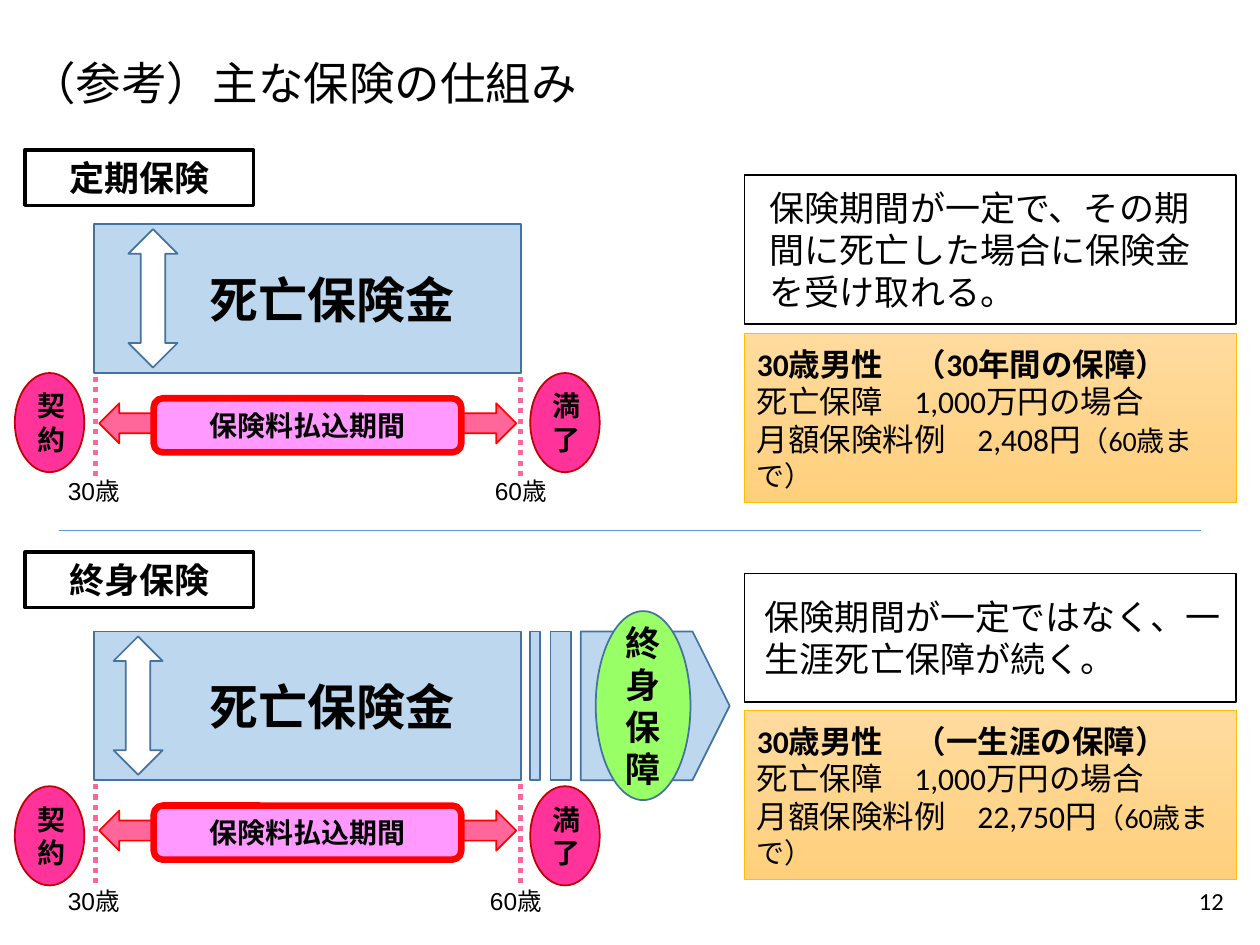
from dataclasses import dataclass

from lxml.etree import SubElement
from pptx import Presentation
from pptx.dml.color import RGBColor
from pptx.enum.dml import MSO_LINE
from pptx.enum.shapes import MSO_CONNECTOR, MSO_SHAPE
from pptx.enum.text import MSO_ANCHOR, MSO_AUTO_SIZE, PP_ALIGN
from pptx.oxml.ns import qn
from pptx.util import Cm, Pt


@dataclass(frozen=True)
class Theme:
    body_font: str = "Calibri"
    label_font: str = "Arial"
    black: str = "000000"
    white: str = "FFFFFF"
    benefit: str = "BDD7EE"
    benefit_line: str = "43739E"
    divider: str = "5B9BD5"
    pay_arrow: str = "FF6699"
    pay_label: str = "FF99FF"
    pay_line: str = "FF0000"
    event: str = "FF3399"
    event_line: str = "C00000"
    lifelong: str = "99FF66"
    example_top: str = "FFDB9E"
    example_bottom: str = "FFD07C"
    example_line: str = "FFC000"
    title_size: int = 26
    benefit_size: int = 28
    text_size: int = 20
    example_size: int = 18
    small_size: int = 16
    age_size: int = 14


theme = Theme()


def add_box(shapes, kind, at, fill=None, line=None, width=1, text="",
            size=theme.text_size, bold=True, align=PP_ALIGN.CENTER):
    """Add a preset shape with its place in centimetres and its text."""
    box = shapes.add_shape(kind, *[Cm(length) for length in at])
    box.shadow.inherit = False
    if fill:
        box.fill.solid()
        box.fill.fore_color.rgb = RGBColor.from_string(fill)
    else:
        box.fill.background()
    if line:
        box.line.color.rgb = RGBColor.from_string(line)
        box.line.width = Pt(width)
    else:
        box.line.fill.background()
    if text:
        frame = box.text_frame
        frame.word_wrap = True
        frame.vertical_anchor = MSO_ANCHOR.MIDDLE
        frame.text = text
        for para in frame.paragraphs:
            para.alignment = align
            for span in para.runs:
                span.font.name = theme.body_font
                span.font.size = Pt(size)
                span.font.bold = bold
                span.font.color.rgb = RGBColor.from_string(theme.black)
    return box


def add_line(shapes, start, end, color, width):
    """Add a straight line between two points in centimetres."""
    line = shapes.add_connector(
        MSO_CONNECTOR.STRAIGHT, *[Cm(length) for length in start + end])
    line.line.color.rgb = RGBColor.from_string(color)
    line.line.width = Pt(width)
    SubElement(line._element.spPr, qn("a:effectLst"))
    return line


deck = Presentation()
deck.slide_width, deck.slide_height = Cm(25.4), Cm(19.05)
page = deck.slides.add_slide(deck.slide_layouts[5])

# Title
title = page.shapes.title
title.left, title.top, title.width, title.height = Cm(0.36), Cm(0.91), Cm(22.76), Cm(1.63)
title.text_frame.text = "（参考）主な保険の仕組み"
title.text_frame.auto_size = MSO_AUTO_SIZE.NONE
title.text_frame.vertical_anchor = MSO_ANCHOR.MIDDLE
para = title.text_frame.paragraphs[0]
para.alignment = PP_ALIGN.LEFT
para.line_spacing = 0.9
font = para.runs[0].font
font.name, font.size = theme.label_font, Pt(theme.title_size)
font.color.rgb = RGBColor.from_string(theme.black)

# Divider between the two kinds of insurance
add_line(page.shapes, (1.19, 10.69), (24.21, 10.69), theme.divider, 0.5)

# Headings
for heading, top in (("定期保険", 3.02), ("終身保険", 11.13)):
    add_box(page.shapes, MSO_SHAPE.RECTANGLE, (0.51, top, 4.6, 1.12),
            line=theme.black, width=2, text=heading)

# Descriptions
descriptions = (
    (3.53, 3.0, 0.51, 0.3, "保険期間が一定で、その期間に死亡した場合に保険金を受け取れる。"),
    (11.56, 2.59, 0.41, 0.1, "保険期間が一定ではなく、一生涯死亡保障が続く。"),
)
for top, height, left_margin, right_margin, text in descriptions:
    box = add_box(page.shapes, MSO_SHAPE.RECTANGLE, (15.01, top, 9.91, height),
                  theme.white, theme.black, text=text, bold=False, align=PP_ALIGN.LEFT)
    box.text_frame.margin_left = Cm(left_margin)
    box.text_frame.margin_right = Cm(right_margin)

# Premium examples
for top, cover, premium in ((6.73, "30年間", "2,408"), (14.33, "一生涯", "22,750")):
    text = (f"30歳男性　（{cover}の保障）\n死亡保障　1,000万円の場合\n"
            f"月額保険料例　{premium}円")
    box = add_box(page.shapes, MSO_SHAPE.RECTANGLE, (15.01, top, 9.91, 3.4),
                  theme.example_top, theme.example_line, 0.5, text,
                  theme.example_size, False, PP_ALIGN.LEFT)
    box.fill.gradient()
    box.fill.gradient_angle = 270
    for stop, color in zip(box.fill.gradient_stops, (theme.example_top, theme.example_bottom)):
        stop.color.rgb = RGBColor.from_string(color)
    paras = box.text_frame.paragraphs
    paras[0].runs[0].font.bold = True
    span = paras[2].add_run()
    span.text = "（60歳まで）"
    span.font.name, span.font.size = theme.body_font, Pt(theme.small_size)
    span.font.color.rgb = RGBColor.from_string(theme.black)

# Diagrams: top, height arrow left, event offset, age offset, end age left, lifelong
diagrams = (
    (4.52, 2.59, 3.0, 4.95, 9.6, False),
    (12.73, 2.29, 3.12, 5.0, 9.5, True),
)
for top, arrow_left, event_offset, age_offset, end_left, lifelong in diagrams:
    group = page.shapes.add_group_shape().shapes

    # Benefit and payment period
    add_box(group, MSO_SHAPE.LEFT_RIGHT_ARROW, (2.0, top + 3.61, 8.41, 0.81),
            theme.pay_arrow, theme.pay_line)
    add_box(group, MSO_SHAPE.FLOWCHART_PROCESS, (1.9, top, 8.61, 3.0), theme.benefit,
            theme.benefit_line, text="　死亡保険金", size=theme.benefit_size)
    add_box(group, MSO_SHAPE.UP_DOWN_ARROW, (arrow_left, top + 0.1, 0.99, 2.79),
            theme.white, theme.benefit_line)
    add_box(group, MSO_SHAPE.ROUNDED_RECTANGLE, (3.1, top + 3.51, 6.2, 1.09),
            theme.pay_label, theme.pay_line, 3.75, "保険料払込期間", theme.small_size)

    # Cover that goes on for life
    if lifelong:
        for left, width in ((10.69, 0.2), (11.1, 0.41)):
            add_box(group, MSO_SHAPE.FLOWCHART_PROCESS, (left, top, width, 3.0),
                    theme.benefit, theme.benefit_line)
        pentagon = add_box(group, MSO_SHAPE.PENTAGON, (11.71, top, 3.0, 3.0),
                           theme.benefit, theme.benefit_line)
        pentagon.adjustments[0] = 0.25
        add_box(group, MSO_SHAPE.OVAL, (12.01, top - 0.41, 1.91, 3.81),
                theme.lifelong, theme.benefit_line, text="終身保障")

    # Start and end: event, dotted line and age
    ends = (("契約", 0.3, 1.93, "30歳", 0.99), ("満了", 10.69, 10.49, "60歳", end_left))
    for event, event_left, line_left, age, age_left in ends:
        add_box(group, MSO_SHAPE.OVAL, (event_left, top + event_offset, 1.4, 2.0),
                theme.event, theme.event_line, text=event, size=theme.small_size)
        dots = add_line(group, (line_left, top + 3.07), (line_left, top + 5.08),
                        theme.pay_arrow, 3)
        dots.line.dash_style = MSO_LINE.ROUND_DOT
        label = group.add_textbox(Cm(age_left), Cm(top + age_offset), Cm(1.8), Cm(0.86))
        label.text_frame.word_wrap = True
        label.text_frame.text = age
        para = label.text_frame.paragraphs[0]
        para.alignment = PP_ALIGN.CENTER
        font = para.runs[0].font
        font.name, font.size = theme.label_font, Pt(theme.age_size)
        font.color.rgb = RGBColor.from_string(theme.black)

# Page number
number = page.shapes.add_textbox(Cm(19.2), Cm(17.65), Cm(5.72), Cm(1.02))
number.text_frame.word_wrap = True
number.text_frame.vertical_anchor = MSO_ANCHOR.MIDDLE
number.text_frame.text = "12"
para = number.text_frame.paragraphs[0]
para.alignment = PP_ALIGN.RIGHT
font = para.runs[0].font
font.name, font.size = theme.body_font, Pt(theme.age_size)
font.color.rgb = RGBColor.from_string(theme.black)

deck.save("out.pptx")
